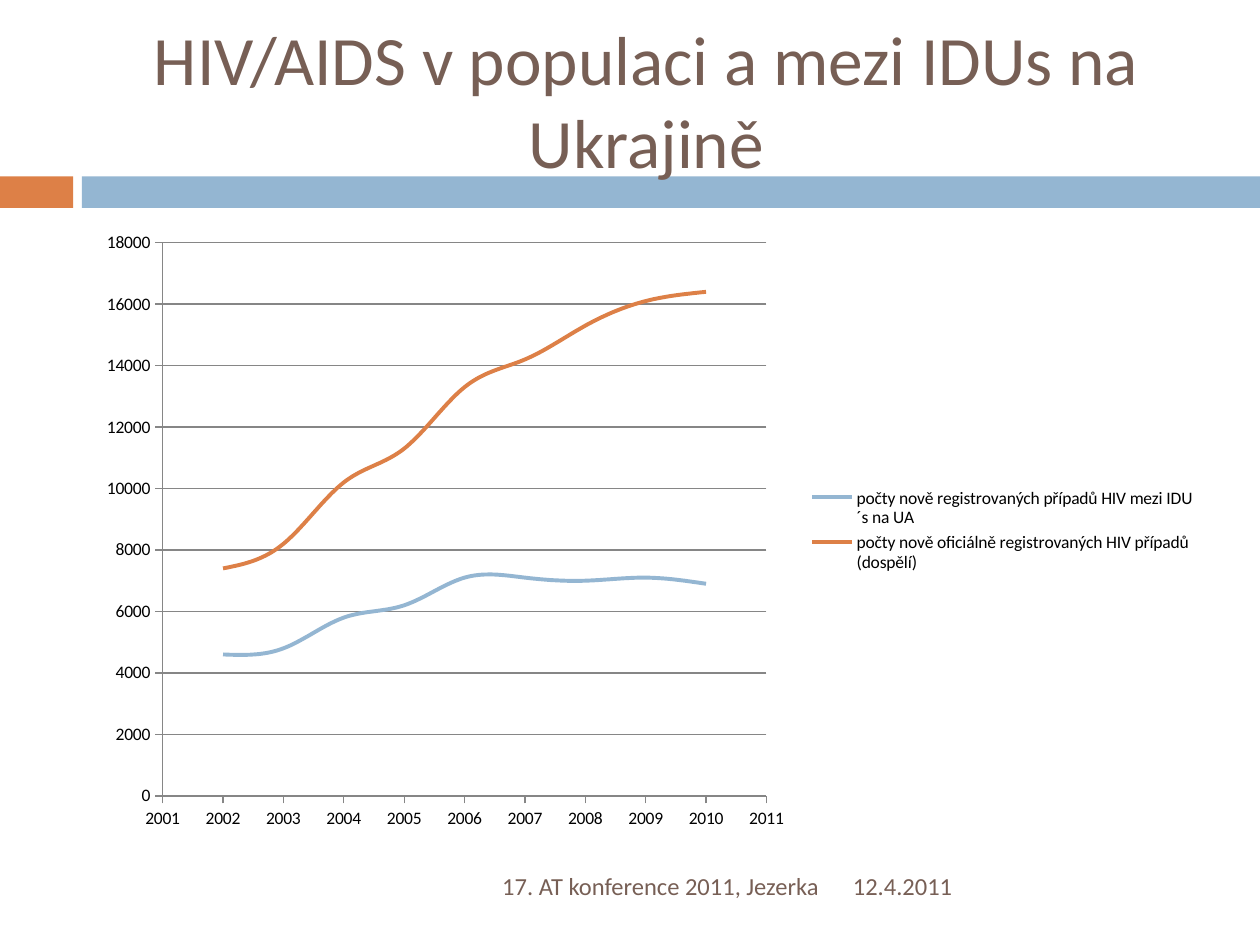
import pptx
import pptx.util
import pptx.chart.data
import pptx.dml.color
import pptx.enum.chart
import pptx.enum.shapes
import pptx.enum.text

# Content
TITLE = "HIV/AIDS v populaci a mezi IDUs na Ukrajině"
CONFERENCE = "17. AT konference 2011, Jezerka"
DATE = "12.4.2011"
YEARS = range(2002, 2011)
CASES = [
    ("počty nově registrovaných případů HIV mezi IDU´s na UA", "blue",
     [4600, 4800, 5800, 6200, 7100, 7100, 7000, 7100, 6900]),
    ("počty nově oficiálně registrovaných HIV případů (dospělí)", "orange",
     [7400, 8200, 10200, 11300, 13300, 14200, 15300, 16100, 16400]),
]

THEME = {
    "font": "Calibri", "title": 39.6, "footer": 14, "chart": 10, "curve": 2.25,
    "brown": "775F55", "blue": "94B6D2", "orange": "DD8047",
    "black": "000000", "grey": "868686",
}

# Layout in inches
WIDTH, HEIGHT = 10, 7.5
LEFT, CONTENT_W = 0.67, 8.92
BAND_TOP, BAND_H = 1.4, 0.25
ACCENT_W, BAND_LEFT = 0.58, 0.65
FOOTER_TOP, FOOTER_H = 6.83, 0.4
DATE_LEFT, FOOTER_GAP = 6.67, 0.07

ALIGN = pptx.enum.text.PP_ALIGN


def color(name):
    return pptx.dml.color.RGBColor.from_string(THEME[name])


def box(*lengths):
    return [pptx.util.Inches(length) for length in lengths]


def style_font(font, size, name):
    font.name = THEME["font"]
    font.size = pptx.util.Pt(THEME[size])
    font.color.rgb = color(name)


def add_band(slide, left, width, name):
    band = slide.shapes.add_shape(pptx.enum.shapes.MSO_SHAPE.RECTANGLE,
                                  *box(left, BAND_TOP, width, BAND_H))
    band.shadow.inherit = False
    band.fill.solid()
    band.fill.fore_color.rgb = color(name)
    band.line.fill.background()


def add_text(slide, text, place, size, align):
    frame = slide.shapes.add_textbox(*box(*place)).text_frame
    frame.word_wrap = True
    frame.vertical_anchor = pptx.enum.text.MSO_ANCHOR.MIDDLE
    frame.text = text
    paragraph = frame.paragraphs[0]
    paragraph.alignment = align
    style_font(paragraph.runs[0].font, size, "brown")


def add_cases_chart(slide):
    cases = pptx.chart.data.XyChartData()
    for name, _, counts in CASES:
        points = cases.add_series(name)
        for year, count in zip(YEARS, counts):
            points.add_data_point(year, count)
    chart = slide.shapes.add_chart(
        pptx.enum.chart.XL_CHART_TYPE.XY_SCATTER_SMOOTH_NO_MARKERS,
        *box(LEFT, 1.75, CONTENT_W, 4.92), cases).chart
    style_font(chart.font, "chart", "black")
    chart.has_title = False
    chart.has_legend = True
    chart.legend.position = pptx.enum.chart.XL_LEGEND_POSITION.RIGHT
    chart.legend.include_in_layout = False
    chart.plots[0].vary_by_categories = False

    # Axes: one tick a year, one gridline every 2000 cases
    scales = [(chart.category_axis, YEARS[0] - 1, YEARS[-1] + 1, 1),
              (chart.value_axis, 0, 18000, 2000)]
    for axis, low, high, step in scales:
        axis.minimum_scale, axis.maximum_scale = low, high
        axis.major_unit = step
        axis.has_major_gridlines = axis is chart.value_axis
        axis.major_tick_mark = pptx.enum.chart.XL_TICK_MARK.OUTSIDE
        axis.tick_labels.number_format = "General"
        axis.tick_labels.number_format_is_linked = False
        axis.format.line.color.rgb = color("grey")
    grid = chart.value_axis.major_gridlines.format.line
    grid.color.rgb = color("grey")

    # Scatter series have no public smooth property, so set it in the XML
    for curve, (_, name, _) in zip(chart.plots[0].series, CASES):
        curve._element.get_or_add_smooth().val = True
        curve.marker.style = pptx.enum.chart.XL_MARKER_STYLE.NONE
        curve.format.line.color.rgb = color(name)
        curve.format.line.width = pptx.util.Pt(THEME["curve"])


def main():
    deck = pptx.Presentation()
    deck.slide_width, deck.slide_height = box(WIDTH, HEIGHT)
    slide = deck.slides.add_slide(deck.slide_layouts[6])

    # Bands under the title
    add_band(slide, 0, ACCENT_W, "orange")
    add_band(slide, BAND_LEFT, WIDTH - BAND_LEFT, "blue")

    add_text(slide, TITLE, (LEFT, 0.25, CONTENT_W, 1.08), "title", ALIGN.CENTER)
    add_cases_chart(slide)

    # Footer: date on the right, conference running up to it
    add_text(slide, DATE,
             (DATE_LEFT, FOOTER_TOP, LEFT + CONTENT_W - DATE_LEFT, FOOTER_H),
             "footer", ALIGN.LEFT)
    add_text(slide, CONFERENCE,
             (LEFT, FOOTER_TOP, DATE_LEFT - FOOTER_GAP - LEFT, FOOTER_H),
             "footer", ALIGN.RIGHT)

    deck.save("out.pptx")


if __name__ == "__main__":
    main()
